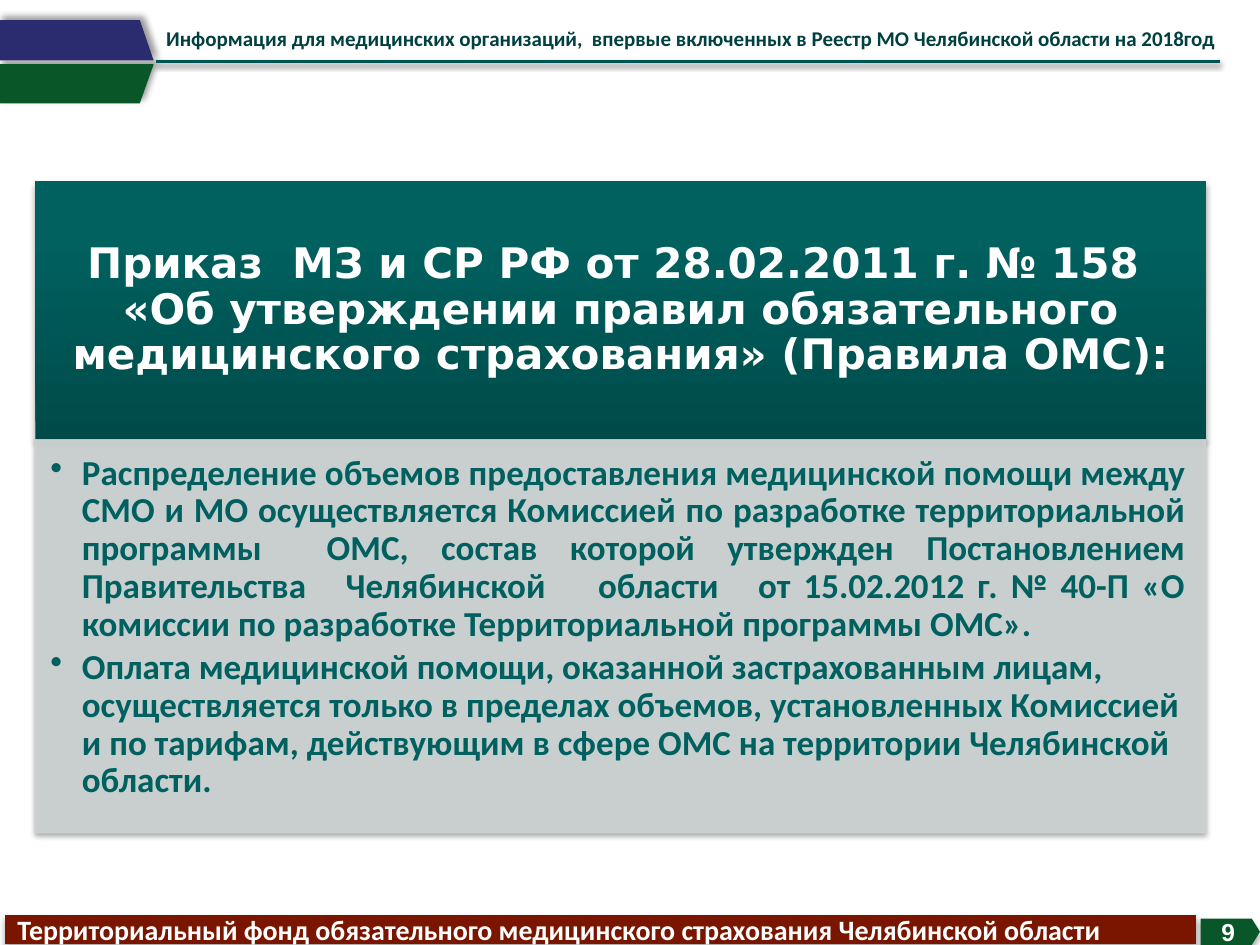
from lxml import etree
from pptx import Presentation
from pptx.dml.color import RGBColor
from pptx.enum.shapes import MSO_CONNECTOR as Connector, MSO_SHAPE as Shape
from pptx.enum.text import MSO_ANCHOR as Anchor, PP_ALIGN as Align
from pptx.oxml.ns import qn
from pptx.util import Inches, Pt

COLORS = {
    "green": "095729", "blue": "2B2C6F", "rule": "005353", "header": "004040",
    "title_dark": "004B49", "title": "00615F", "panel": "CCD3D3",
    "body": "006060", "footer": "7A1600", "white": "FFFFFF", "black": "000000",
}

# Shadows: opacity %, blur pt, distance pt, direction degrees
TAB_SHADOW = (40, 4, 3, 315)
RULE_SHADOW = (38, 3.1, 1.6, 90)
CARD_SHADOW = (35, 3.1, 1.8, 90)
FOOTER_SHADOW = (32, 3.5, 2.2, 90)

HEADER = ("Информация для медицинских организаций,  впервые включенных "
          "в Реестр МО Челябинской области на 2018год")
TITLE = ("Приказ  МЗ и СР РФ от 28.02.2011 г. № 158 \v«Об утверждении правил "
         "обязательного медицинского страхования» (Правила ОМС):")
RULES = [
    ("Распределение объемов предоставления медицинской помощи между СМО и МО "
     "осуществляется Комиссией по разработке территориальной программы  ОМС, "
     "состав которой утвержден Постановлением Правительства   Челябинской    "
     "области   от 15.02.2012 г. № 40-П «О комиссии по разработке "
     "Территориальной программы ОМС».", Align.JUSTIFY),
    ("Оплата медицинской помощи, оказанной застрахованным лицам, осуществляется "
     "только в пределах объемов, установленных Комиссией и по тарифам, "
     "действующим в сфере ОМС на территории Челябинской области.", Align.LEFT),
]
FOOTER = "Территориальный фонд обязательного медицинского страхования Челябинской области"


def rgb(name):
    return RGBColor.from_string(COLORS[name])


def add_shadow(shape, shadow):
    opacity, blur, distance, direction = shadow
    properties = shape._element.spPr
    for old in properties.findall(qn("a:effectLst")):
        properties.remove(old)
    effects = etree.SubElement(properties, qn("a:effectLst"))
    outer = etree.SubElement(
        effects, qn("a:outerShdw"), blurRad=str(Pt(blur)), dist=str(Pt(distance)),
        dir=str(direction * 60000), algn="ctr", rotWithShape="0")
    color = etree.SubElement(outer, qn("a:srgbClr"), val=COLORS["black"])
    etree.SubElement(color, qn("a:alpha"), val=str(opacity * 1000))


def paint(shape, color, shadow):
    shape.fill.solid()
    shape.fill.fore_color.rgb = rgb(color)
    shape.line.fill.background()
    add_shadow(shape, shadow)


def add_outline(page, points, color, shadow):
    corners = [(Inches(x), Inches(y)) for x, y in points]
    builder = page.shapes.build_freeform(*corners[0])
    builder.add_line_segments(corners[1:], close=True)
    shape = builder.convert_to_shape()
    paint(shape, color, shadow)
    return shape


def add_block(page, kind, area, color, shadow):
    shape = page.shapes.add_shape(kind, *map(Inches, area))
    paint(shape, color, shadow)
    return shape


def set_frame(shape, margins=(0.1, 0.05, 0.1, 0.05), anchor=Anchor.MIDDLE):
    frame = shape.text_frame
    frame.word_wrap = True
    frame.vertical_anchor = anchor
    (frame.margin_left, frame.margin_top,
     frame.margin_right, frame.margin_bottom) = map(Inches, margins)
    return frame


def write(para, text, size, color, font="Calibri", align=Align.LEFT):
    para.text = text
    para.alignment = align
    for span in para.runs:
        span.font.name = font
        span.font.size = Pt(size)
        span.font.bold = True
        span.font.color.rgb = rgb(color)


def add_bullet(para):
    properties = para._p.get_or_add_pPr()
    properties.set("marL", str(Inches(0.25)))
    properties.set("indent", str(Inches(-0.25)))
    etree.SubElement(properties, qn("a:buChar"), char="•")


def make_translucent(shape, percent):
    for color in shape._element.spPr.iter(qn("a:srgbClr")):
        if color.getparent().tag == qn("a:solidFill"):
            etree.SubElement(color, qn("a:alpha"), val=str(percent * 1000))


def add_header(page):
    # Slanted tabs, rule and running title
    add_outline(page, [(1.22, 0.51), (1.11, 0.82), (-0.01, 0.82), (-0.01, 0.51)],
                "green", TAB_SHADOW)
    add_outline(page, [(1.22, 0.48), (1.11, 0.16), (-0.01, 0.16), (-0.01, 0.48)],
                "blue", TAB_SHADOW)
    rule = page.shapes.add_connector(
        Connector.STRAIGHT, Inches(1.24), Inches(0.49), Inches(9.68), Inches(0.49))
    rule.line.color.rgb = rgb("rule")
    rule.line.width = Pt(2)
    add_shadow(rule, RULE_SHADOW)
    box = page.shapes.add_textbox(Inches(1.22), Inches(0.15), Inches(8.78), Inches(0.61))
    write(set_frame(box, anchor=Anchor.TOP).paragraphs[0], HEADER, 12, "header")


def add_card(page):
    # Gradient title block
    block = add_block(page, Shape.RECTANGLE, (0.28, 1.44, 9.29, 2.05), "title", CARD_SHADOW)
    block.fill.gradient()
    block.fill.gradient_angle = 90
    stops = zip(block.fill.gradient_stops, ("title_dark", "title"), (0, 0.8))
    for stop, color, position in stops:
        stop.color.rgb = rgb(color)
        stop.position = position
    para = set_frame(block, (0.19, 0.11, 0.19, 0.11)).paragraphs[0]
    write(para, TITLE, 24, "white", "DejaVu Sans", Align.CENTER)
    para.line_spacing = 0.9
    para.space_after = Pt(8.4)

    # Bulleted panel
    panel = add_block(page, Shape.RECTANGLE, (0.28, 3.49, 9.29, 3.12), "panel", CARD_SHADOW)
    panel.line.color.rgb = rgb("panel")
    panel.line.width = Pt(0.75)
    make_translucent(panel, 90)
    frame = set_frame(panel, (0.12, 0.12, 0.16, 0.17), Anchor.TOP)
    for index, (text, align) in enumerate(RULES):
        para = frame.add_paragraph() if index else frame.paragraphs[0]
        write(para, text, 20, "body", align=align)
        para.line_spacing = 0.9
        para.space_after = Pt(3)
        add_bullet(para)


def add_footer(page):
    # Organisation bar and page number
    bar = add_outline(page, [(0.04, 7.26), (9.49, 7.26), (9.49, 7.49), (0.04, 7.49)],
                      "footer", FOOTER_SHADOW)
    write(set_frame(bar).paragraphs[0], FOOTER, 16, "white")
    number = add_block(page, Shape.PENTAGON, (9.53, 7.29, 0.47, 0.21), "green", FOOTER_SHADOW)
    number.adjustments[0] = 0.31
    write(set_frame(number).paragraphs[0], "9", 14, "white", "Arial", Align.CENTER)


def main():
    deck = Presentation()
    deck.slide_width, deck.slide_height = Inches(10), Inches(7.5)
    page = deck.slides.add_slide(deck.slide_layouts[6])
    add_header(page)
    add_card(page)
    add_footer(page)
    deck.save("out.pptx")


if __name__ == "__main__":
    main()
